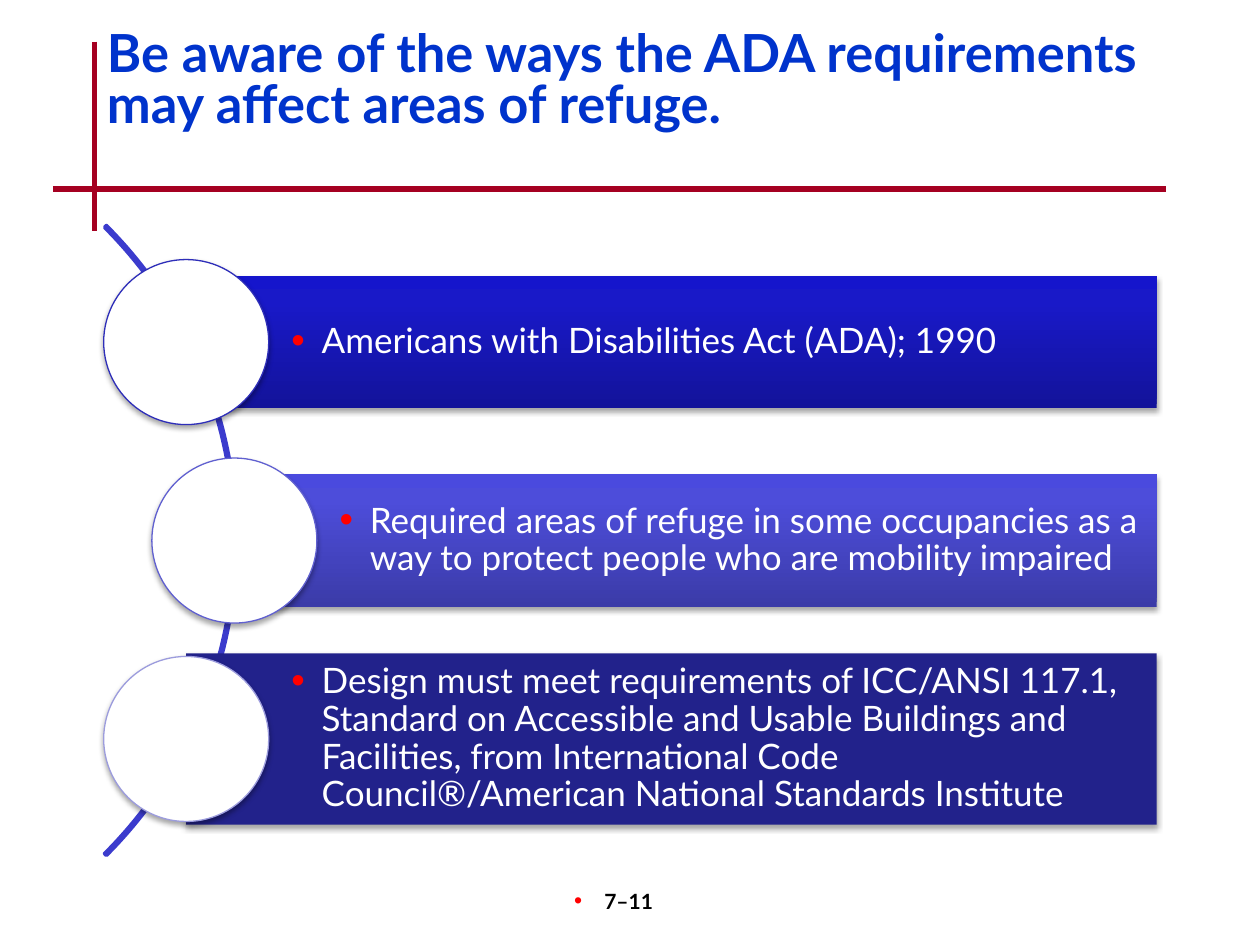
"""Build the slide on ADA requirements and areas of refuge."""
import copy
from dataclasses import dataclass

import pptx
import pptx.dml.color
import pptx.enum.shapes
import pptx.enum.text
import pptx.oxml
import pptx.oxml.ns
import pptx.util

RGBColor = pptx.dml.color.RGBColor
Shapes = pptx.enum.shapes.MSO_SHAPE
Align = pptx.enum.text.PP_ALIGN
Box = tuple[float, float, float, float]

CELL = pptx.util.Inches(0.1)
COLUMNS, ROWS = 100, 75
FONT = "Lato"

WHITE = RGBColor(0xFF, 0xFF, 0xFF)
BLACK = RGBColor(0x00, 0x00, 0x00)
BULLET_RED = RGBColor(0xFF, 0x00, 0x00)
RULE_RED = RGBColor(0xA5, 0x00, 0x21)
TITLE_BLUE = RGBColor(0x00, 0x33, 0xCC)
ARC_BLUE = RGBColor(0x3B, 0x3B, 0xCD)
ROYAL_BAR = (RGBColor(0x13, 0x13, 0x9A), RGBColor(0x19, 0x19, 0xC8), RGBColor(0x15, 0x15, 0xCC))
VIOLET_BAR = (RGBColor(0x3B, 0x3B, 0xA8), RGBColor(0x4D, 0x4D, 0xDA), RGBColor(0x4A, 0x4A, 0xDE))
NAVY_BAR = (RGBColor(0x22, 0x22, 0x8B),)
ROYAL_RING = RGBColor(0x2E, 0x2E, 0xB9)
VIOLET_RING = RGBColor(0x60, 0x60, 0xD0)
PALE_RING = RGBColor(0x9C, 0x9C, 0xDD)
GRADIENT_POSITIONS = (0, 0.8, 1)

TITLE_BOX: Box = (7.5, 2.1, 85, 10)
PAGE_BOX: Box = (39.2, 70, 20.8, 5)
PAGE_MARGINS: Box = (1, 0.5, 2.8, 0.5)
BAR_MARGINS: Box = (8.35, 0.6, 0.6, 0.6)
BULLET_INDENT = 2.4

ARC_DIAMETER = 70.7
ARC_RIGHT = 18.8
ARC_ADJUSTMENTS = (189, 27, 0.003)
CIRCLE_DIAMETER = 13.1
BAR_RIGHT = 91.8
OUTER_LEFT, INNER_LEFT = 14.78, 18.6
BAR_HEIGHT, TALL_BAR_HEIGHT = 10.5, 13.6
FIRST_MIDDLE, PITCH = 27.15, 15.75
ARC_MIDDLE = FIRST_MIDDLE + PITCH


@dataclass(frozen=True)
class Point:
    """One point of the list, as a bar with a circle at its left end."""
    text: str
    left: float
    height: float
    fills: tuple[RGBColor, ...]
    ring: RGBColor


@dataclass(frozen=True)
class Rule:
    """One straight rule, from start to end in grid cells."""
    start: tuple[float, float]
    end: tuple[float, float]


@dataclass(frozen=True)
class TextStyle:
    """The look of one paragraph."""
    size: float
    color: RGBColor
    bold: bool = False
    align: Align = Align.LEFT
    spacing: float = 1.0
    bulleted: bool = False


TITLE_STYLE = TextStyle(30, TITLE_BLUE, bold=True, spacing=0.8)
POINT_STYLE = TextStyle(20, WHITE, spacing=0.9, bulleted=True)
PAGE_STYLE = TextStyle(12, BLACK, bold=True, align=Align.CENTER, bulleted=True)

RULES = (Rule((7.5, 3.3), (7.5, 18.3)), Rule((4.2, 15), (92.5, 15)))
POINTS = (
    Point("Americans with Disabilities Act (ADA); 1990",
          OUTER_LEFT, BAR_HEIGHT, ROYAL_BAR, ROYAL_RING),
    Point("Required areas of refuge in some occupancies as a way to protect people "
          "who are mobility impaired",
          INNER_LEFT, BAR_HEIGHT, VIOLET_BAR, VIOLET_RING),
    Point("Design must meet requirements of ICC/ANSI 117.1, Standard on Accessible and "
          "Usable Buildings and Facilities, from International Code Council®/American "
          "National Standards Institute",
          OUTER_LEFT, TALL_BAR_HEIGHT, NAVY_BAR, PALE_RING),
)


def cells(count: float) -> pptx.util.Emu:
    """Turn a count of grid cells into a length."""
    return pptx.util.Emu(round(count * CELL))


def add_element(parent, tag: str, **attributes):
    """Append a drawing element to its parent and return it."""
    element = pptx.oxml.parse_xml(f"<a:{tag} {pptx.oxml.ns.nsdecls('a')}/>")
    for key, value in attributes.items():
        element.set(key, str(value))
    parent.append(element)
    return element


def add_shadow(shape) -> None:
    """Give a shape a soft shadow below it."""
    effects = shape._element.spPr.find(pptx.oxml.ns.qn("a:effectLst"))
    shadow = add_element(effects, "outerShdw", blurRad=pptx.util.Pt(3.1),
                         dist=pptx.util.Pt(1.8), dir=5400000, rotWithShape=0)
    color = add_element(shadow, "srgbClr", val=BLACK)
    add_element(color, "alpha", val=35000)


def add_bullet(paragraph) -> None:
    """Hang a red bullet before a paragraph."""
    properties = paragraph._p.get_or_add_pPr()
    properties.set("marL", str(cells(BULLET_INDENT)))
    properties.set("indent", str(-cells(BULLET_INDENT)))
    add_element(add_element(properties, "buClr"), "srgbClr", val=BULLET_RED)
    add_element(properties, "buSzPct", val=110000)
    add_element(properties, "buFont", typeface="Arial")
    add_element(properties, "buChar", char="•")


def set_margins(frame, margins: Box) -> None:
    """Set the left, top, right and bottom insets of a text frame."""
    (frame.margin_left, frame.margin_top,
     frame.margin_right, frame.margin_bottom) = map(cells, margins)


def write(frame, text: str, style: TextStyle) -> None:
    """Write one paragraph in a style."""
    frame.word_wrap = True
    paragraph = frame.paragraphs[0]
    paragraph.alignment = style.align
    paragraph.line_spacing = style.spacing
    if style.bulleted:
        add_bullet(paragraph)
    run = paragraph.add_run()
    run.text = text
    run.font.name = FONT
    run.font.size = pptx.util.Pt(style.size)
    run.font.bold = style.bold
    run.font.color.rgb = style.color


def paint(shape, colors: tuple[RGBColor, ...]) -> None:
    """Fill with one colour, or with a gradient that rises from the bottom."""
    if len(colors) == 1:
        shape.fill.solid()
        shape.fill.fore_color.rgb = colors[0]
        return
    shape.fill.gradient()
    shape.fill.gradient_angle = 90
    stop_list = shape._element.spPr.find(".//" + pptx.oxml.ns.qn("a:gsLst"))
    stop_list.append(copy.deepcopy(stop_list[-1]))
    for stop, position, color in zip(shape.fill.gradient_stops, GRADIENT_POSITIONS, colors):
        stop.position = position
        stop.color.rgb = color


def outline(shape, color: RGBColor, width: float) -> None:
    """Set the line of a shape or connector."""
    shape.line.color.rgb = color
    shape.line.width = pptx.util.Pt(width)


def draw_shape(slide, kind: Shapes, box: Box):
    """Add a preset shape with no shadow."""
    shape = slide.shapes.add_shape(kind, *map(cells, box))
    shape.shadow.inherit = False
    return shape


def draw_text(slide, box: Box, text: str, style: TextStyle):
    """Add a text box and return its frame."""
    frame = slide.shapes.add_textbox(*map(cells, box)).text_frame
    write(frame, text, style)
    return frame


def draw_rule(slide, rule: Rule) -> None:
    """Draw a red rule."""
    connector = slide.shapes.add_connector(
        pptx.enum.shapes.MSO_CONNECTOR.STRAIGHT, *map(cells, rule.start + rule.end))
    outline(connector, RULE_RED, 3)
    add_element(connector._element.spPr, "effectLst")


def draw_arc(slide) -> None:
    """Draw the thin arc that links the circles."""
    arc = draw_shape(slide, Shapes.BLOCK_ARC, (
        ARC_RIGHT - ARC_DIAMETER, ARC_MIDDLE - ARC_DIAMETER / 2, ARC_DIAMETER, ARC_DIAMETER))
    for index, value in enumerate(ARC_ADJUSTMENTS):
        arc.adjustments[index] = value
    arc.fill.background()
    outline(arc, ARC_BLUE, 2)


def draw_point(slide, point: Point, middle: float) -> None:
    """Draw a bar with its text, and the circle on its left end."""
    bar = draw_shape(slide, Shapes.RECTANGLE, (
        point.left, middle - point.height / 2, BAR_RIGHT - point.left, point.height))
    paint(bar, point.fills)
    bar.line.fill.background()
    add_shadow(bar)
    set_margins(bar.text_frame, BAR_MARGINS)
    bar.text_frame.vertical_anchor = pptx.enum.text.MSO_ANCHOR.MIDDLE
    write(bar.text_frame, point.text, POINT_STYLE)

    radius = CIRCLE_DIAMETER / 2
    circle = draw_shape(slide, Shapes.OVAL, (
        point.left - radius, middle - radius, CIRCLE_DIAMETER, CIRCLE_DIAMETER))
    paint(circle, (WHITE,))
    outline(circle, point.ring, 0.75)
    add_shadow(circle)


def main() -> None:
    """Build and save the slide."""
    deck = pptx.Presentation()
    deck.slide_width, deck.slide_height = cells(COLUMNS), cells(ROWS)
    slide = deck.slides.add_slide(deck.slide_layouts[6])
    for rule in RULES:
        draw_rule(slide, rule)
    set_margins(draw_text(slide, PAGE_BOX, "7–11", PAGE_STYLE), PAGE_MARGINS)
    draw_text(slide, TITLE_BOX,
              "Be aware of the ways the ADA requirements may affect areas of refuge.", TITLE_STYLE)
    draw_arc(slide)
    for row, point in enumerate(POINTS):
        draw_point(slide, point, FIRST_MIDDLE + row * PITCH)
    deck.save("out.pptx")


if __name__ == "__main__":
    main()
